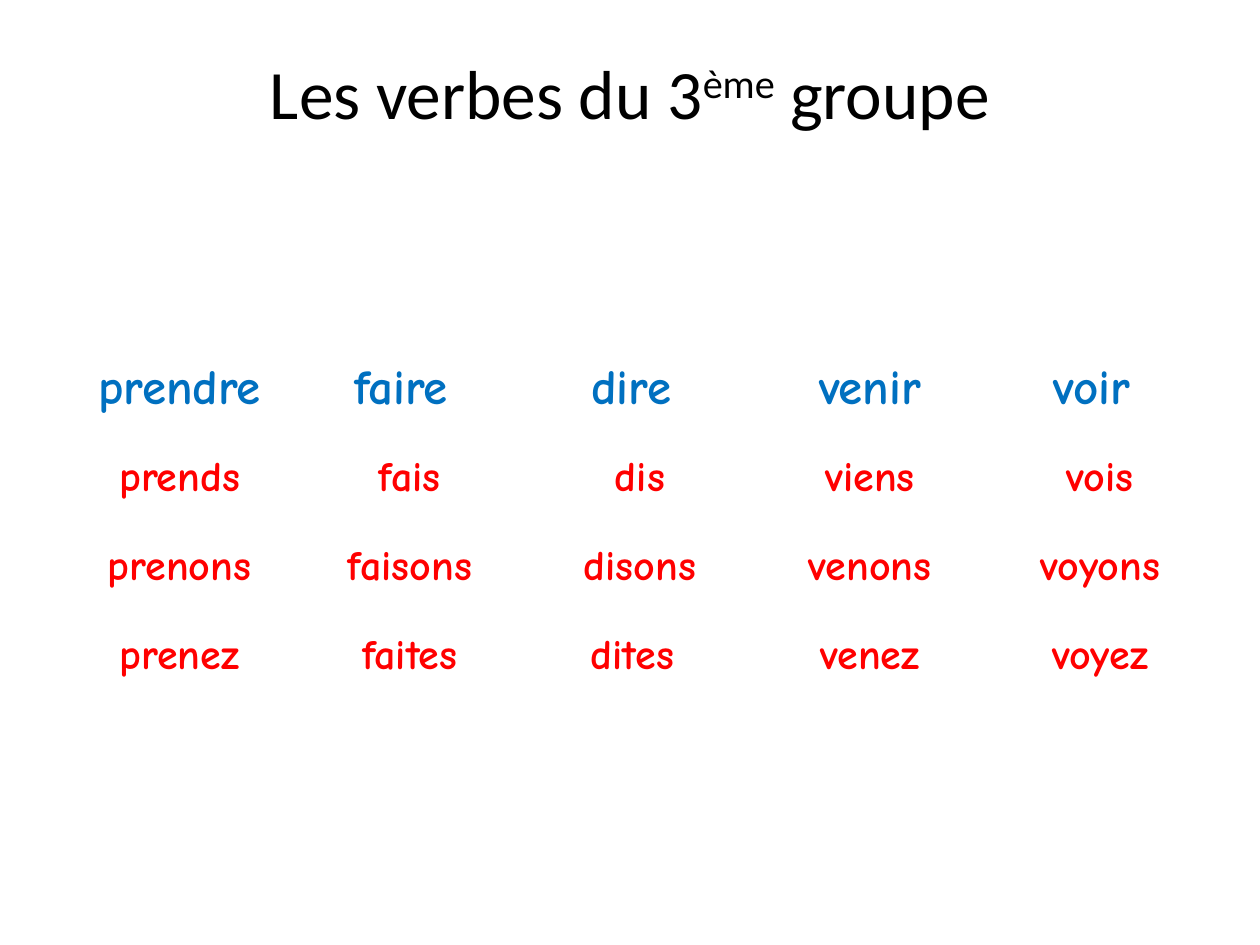
from pptx import Presentation
from pptx.dml.color import RGBColor
from pptx.enum.text import MSO_ANCHOR, PP_ALIGN
from pptx.oxml.ns import qn
from pptx.util import Cm, Pt
from lxml.etree import SubElement

BLACK, WHITE, BLUE, RED = "000000", "FFFFFF", "0070C0", "FF0000"

VERBS = [
    ["prendre", "faire ", "dire ", "venir", "voir "],
    ["prends", "fais", "dis", "viens", "vois"],
    ["prenons", "faisons", "disons", "venons", "voyons"],
    ["prenez", "faites", "dites ", "venez", "voyez"],
]


def rgb(color):
    return RGBColor.from_string(color)


def add_run(p, text, font, size, color, bold=False):
    r = p.add_run()
    r.text = text
    r.font.name = font
    r.font.size = Pt(size)
    r.font.bold = bold
    r.font.color.rgb = rgb(color)
    return r


def add_title(s):
    sp = s.shapes.add_textbox(Cm(1.27), Cm(0.76), Cm(22.86), Cm(3.18))
    tf = sp.text_frame
    tf.word_wrap = True
    tf.vertical_anchor = MSO_ANCHOR.MIDDLE
    tf.margin_bottom = Cm(1.13)  # lifts the line above the middle
    p = tf.paragraphs[0]
    p.alignment = PP_ALIGN.CENTER
    for text, raised in (("Les verbes du 3", False), ("ème", True), (" groupe", False)):
        r = add_run(p, text, "Calibri", 39.6, BLACK)
        if raised:
            r.font._element.set("baseline", "30000")


def set_side_borders(cell, color):
    tcPr = cell._tc.get_or_add_tcPr()
    for side in ("a:lnL", "a:lnR"):
        ln = SubElement(tcPr, qn(side), w=str(Pt(1)))
        fill = SubElement(ln, qn("a:solidFill"))
        SubElement(fill, qn("a:srgbClr"), val=color)


def fill_cell(cell, text, size, color):
    set_side_borders(cell, WHITE)
    cell.fill.solid()
    cell.fill.fore_color.rgb = rgb(WHITE)
    cell.vertical_anchor = MSO_ANCHOR.MIDDLE
    p = cell.text_frame.paragraphs[0]
    p.alignment = PP_ALIGN.CENTER
    add_run(p, text, "Comic Neue", size, color, bold=True)


def add_verb_table(s):
    rows, cols = len(VERBS), len(VERBS[0])
    col_w, row_h = Cm(4.64), Cm(1.8)
    table = s.shapes.add_table(rows, cols, Cm(1.3), Cm(6.93),
                               col_w * cols, row_h * rows).table
    for i, forms in enumerate(VERBS):
        # Infinitives head the columns, conjugated forms follow
        size, color = (28, BLUE) if i == 0 else (24, RED)
        for j, form in enumerate(forms):
            fill_cell(table.cell(i, j), form, size, color)


def main():
    prs = Presentation()
    prs.slide_width, prs.slide_height = Cm(25.4), Cm(19.05)
    s = prs.slides.add_slide(prs.slide_layouts[6])
    add_title(s)
    add_verb_table(s)
    prs.save("out.pptx")


if __name__ == "__main__":
    main()
